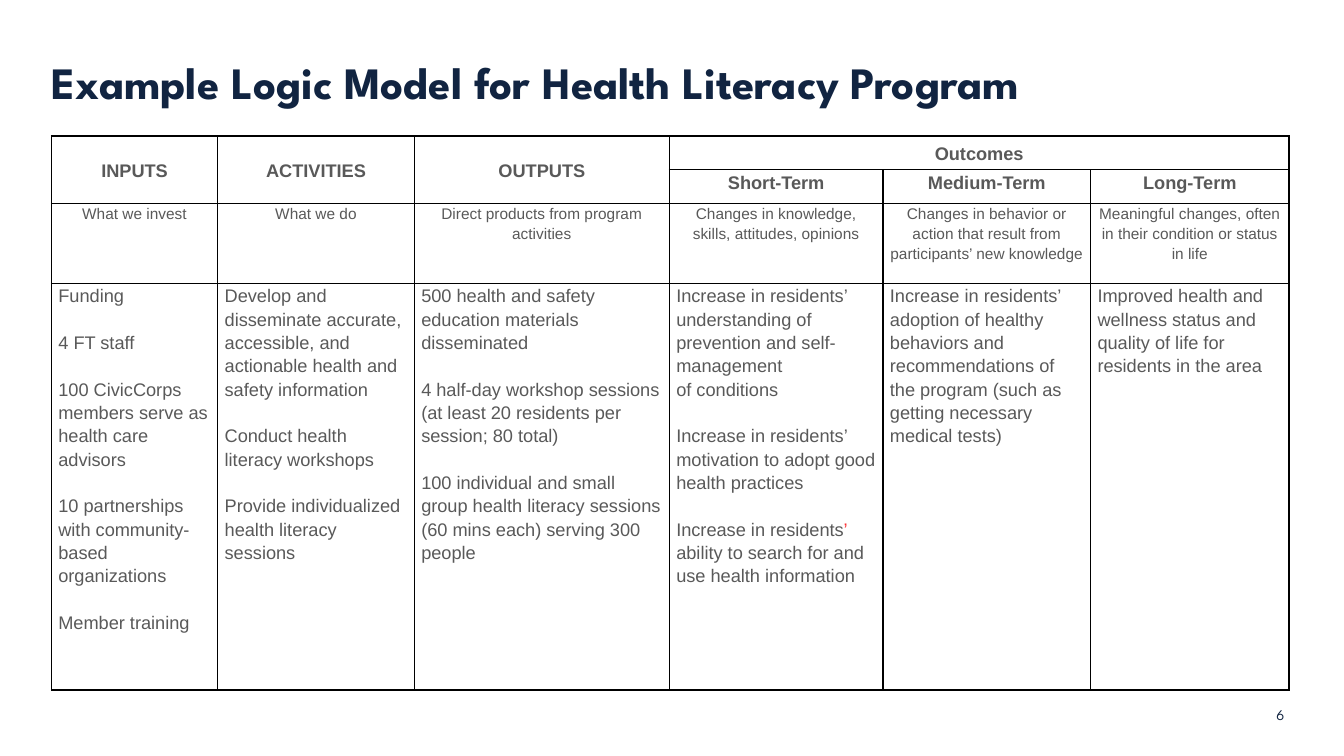
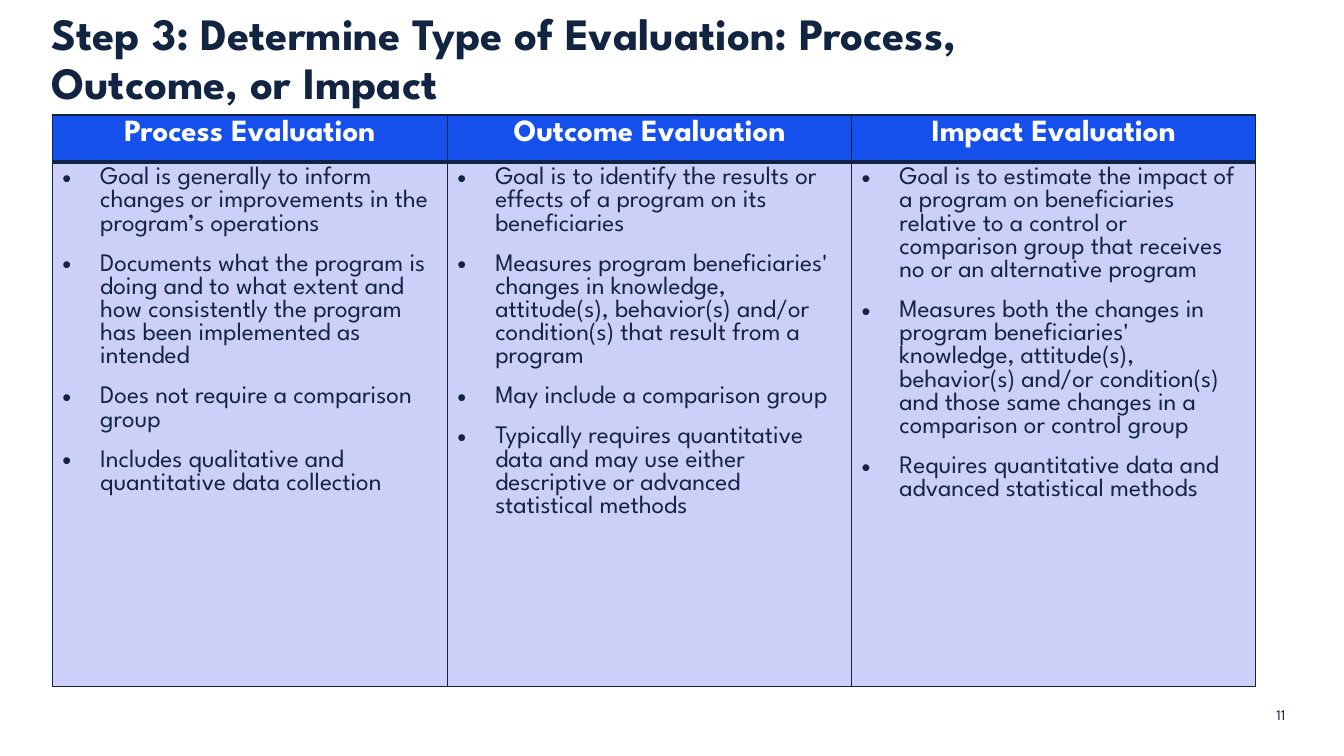
from lxml import etree
from pptx import Presentation
from pptx.dml.color import RGBColor
from pptx.enum.text import MSO_ANCHOR, PP_ALIGN
from pptx.oxml.ns import qn
from pptx.util import Pt

LEFT, CENTER = PP_ALIGN.LEFT, PP_ALIGN.CENTER
TOP, MIDDLE, BOTTOM = MSO_ANCHOR.TOP, MSO_ANCHOR.MIDDLE, MSO_ANCHOR.BOTTOM

COLORS = {
    "navy": "112441",
    "blue": "1550ED",
    "lavender": "CCD0F8",
    "gray": "595959",
    "red": "FD2F32",
    "black": "000000",
    "white": "FFFFFF",
}
BRAND_FONT = "League Spartan"
BODY_FONT = "Arial"
MARGIN = 36.7
EDGES = ("lnL", "lnR", "lnT", "lnB")

LOGIC_COLUMNS = (118.8, 140.4, 182.2, 152.6, 148.3, 141.8)
LOGIC_ROWS = (24, 24, 57.2, 290.5)
LOGIC_HEADINGS = ("INPUTS", "ACTIVITIES", "OUTPUTS", "Outcomes")
LOGIC_TERMS = ("Short-Term", "Medium-Term", "Long-Term")
LOGIC_HINTS = (
    "What we invest",
    "What we do",
    "Direct products from program activities",
    "Changes in knowledge, skills, attitudes, opinions",
    "Changes in behavior or action that result from participants’ new knowledge",
    "Meaningful changes, often in their condition or status in life",
)
LOGIC_DETAILS = (
    (
        "Funding",
        "4 FT staff",
        "100 CivicCorps members serve as health care advisors",
        "10 partnerships with community-based organizations",
        "Member training",
    ),
    (
        "Develop and disseminate accurate, accessible, and\vactionable health and safety information",
        "Conduct health literacy workshops",
        "Provide individualized health literacy sessions",
    ),
    (
        "500 health and safety education materials disseminated",
        "4 half-day workshop sessions (at least 20 residents per session; 80 total)",
        "100 individual and small group health literacy sessions (60 mins each) serving 300 people",
    ),
    (
        "Increase in residents’ understanding of prevention and self-management\vof conditions",
        "Increase in residents’ motivation to adopt good health practices",
        ("Increase in residents", "’ ", "ability to search for and use health information"),
    ),
    (
        "Increase in residents’ adoption of healthy behaviors and recommendations "
        "of the program (such as getting necessary medical tests)",
    ),
    ("Improved health and wellness status and quality of life for residents in the area",),
)

EVALUATIONS = {
    "Process Evaluation": (
        "Goal is generally to inform changes or improvements in the program’s operations",
        "Documents what the program is doing and to what extent and how consistently "
        "the program has been implemented as intended",
        "Does not require a comparison group",
        "Includes qualitative and quantitative data collection",
    ),
    "Outcome Evaluation": (
        "Goal is to identify the results or effects of a program on its beneficiaries",
        "Measures program beneficiaries' changes in knowledge, attitude(s), behavior(s) "
        "and/or condition(s) that result from a program",
        "May include a comparison group",
        "Typically requires quantitative data and may use either descriptive or "
        "advanced statistical methods",
    ),
    "Impact Evaluation": (
        "Goal is to estimate the impact of a program on beneficiaries relative to a "
        "control or comparison group that receives no or an alternative program",
        "Measures both the changes in program beneficiaries' knowledge, attitude(s), "
        "behavior(s) and/or condition(s) and those same changes in a comparison or control group",
        "Requires quantitative data and advanced statistical methods",
    ),
}


class Deck:
    def __init__(self):
        self.deck = Presentation()
        self.deck.slide_width, self.deck.slide_height = Pt(960), Pt(540)
        self.page = None

    def add_page(self, title, number, title_width):
        self.page = self.deck.slides.add_slide(self.deck.slide_layouts[6])
        self.text(title, (MARGIN, 44.6, title_width, 33.1), 32, BOTTOM, bold=True, line_spacing=0.9)
        self.text(str(number), (911.7, 505.4, 18.5, 10.8), 10.5, MIDDLE)

    def text(self, content, place, size, anchor, bold=False, line_spacing=1.0):
        box = self.page.shapes.add_textbox(*map(Pt, place))
        frame = box.text_frame
        frame.word_wrap = True
        frame.margin_left = frame.margin_right = frame.margin_top = frame.margin_bottom = 0
        frame.vertical_anchor = anchor
        self.set_paragraphs(frame, [content], size, "navy", BRAND_FONT, bold,
                            line_spacing=line_spacing)

    def set_paragraphs(self, frame, texts, size, color, font, bold=False, align=LEFT,
                       line_spacing=1.0, before=0, after=0, bullets=False):
        for index, text in enumerate(texts):
            para = frame.add_paragraph() if index else frame.paragraphs[0]
            pieces = (text,) if isinstance(text, str) else text
            para.text = pieces[0]
            for piece in pieces[1:]:
                para.add_run().text = piece
            para.alignment = align
            para.line_spacing = line_spacing
            para.space_before = Pt(before if index else 0)
            para.space_after = Pt(after)
            if bullets:
                self.bullet(para)
            for span in para.runs:
                span.font.size = Pt(size)
                span.font.name = font
                span.font.bold = bold
                span.font.color.rgb = RGBColor.from_string(COLORS[color])
            if len(pieces) > 1:
                para.runs[1].font.color.rgb = RGBColor.from_string(COLORS["red"])

    def bullet(self, para):
        properties = para._p.get_or_add_pPr()
        properties.set("marL", str(Pt(27)))
        properties.set("indent", str(-Pt(27)))
        etree.SubElement(properties, qn("a:buFont")).set("typeface", BODY_FONT)
        etree.SubElement(properties, qn("a:buChar")).set("char", "•")

    def table(self, left, top, columns, rows):
        frame = self.page.shapes.add_table(
            len(rows), len(columns), Pt(left), Pt(top), Pt(sum(columns)), Pt(sum(rows)))
        table = frame.table
        table.first_row = table.horz_banding = False
        for column, width in zip(table.columns, columns):
            column.width = Pt(width)
        for row, height in zip(table.rows, rows):
            row.height = Pt(height)
        return table

    def style_cell(self, cell, line_color, fill=None, top_width=1, bottom_width=1):
        if fill:
            cell.fill.solid()
            cell.fill.fore_color.rgb = RGBColor.from_string(COLORS[fill])
        else:
            cell.fill.background()
        properties = cell._tc.get_or_add_tcPr()
        for index, (edge, width) in enumerate(zip(EDGES, (1, 1, top_width, bottom_width))):
            line = etree.Element(qn("a:" + edge), w=str(Pt(width)))
            solid = etree.SubElement(line, qn("a:solidFill"))
            etree.SubElement(solid, qn("a:srgbClr")).set("val", COLORS[line_color])
            properties.insert(index, line)

    def logic_table(self):
        table = self.table(MARGIN, 97.2, LOGIC_COLUMNS, LOGIC_ROWS)
        for cell in table.iter_cells():
            cell.margin_left = cell.margin_right = Pt(5)
            cell.margin_top = cell.margin_bottom = 0
            self.style_cell(cell, "black")
        for column in range(3):
            table.cell(0, column).merge(table.cell(1, column))
        table.cell(0, 3).merge(table.cell(0, 5))

        def fill_row(row, first, contents, size, **style):
            for column, texts in enumerate(contents, first):
                self.set_paragraphs(table.cell(row, column).text_frame, texts, size, "gray",
                                    BODY_FONT, line_spacing=1.15, **style)

        fill_row(0, 0, [[text] for text in LOGIC_HEADINGS], 13, bold=True, align=CENTER)
        fill_row(1, 3, [[text] for text in LOGIC_TERMS], 13, bold=True, align=CENTER)
        fill_row(2, 0, [[text] for text in LOGIC_HINTS], 11, align=CENTER)
        fill_row(3, 0, LOGIC_DETAILS, 13, before=16.7)
        for column in range(len(LOGIC_HEADINGS)):
            table.cell(0, column).vertical_anchor = MIDDLE

    def evaluation_table(self):
        table = self.table(37.4, 82.1, (282.2, 288.7, 288.7), (33.1, 374.4))
        for column, (heading, points) in enumerate(EVALUATIONS.items()):
            head, body = table.cell(0, column), table.cell(1, column)
            self.style_cell(head, "navy", "blue", bottom_width=3)
            self.style_cell(body, "navy", "lavender", top_width=3)
            head.vertical_anchor = body.vertical_anchor = TOP
            self.set_paragraphs(head.text_frame, [heading], 22, "white", BRAND_FONT, True, CENTER)
            self.set_paragraphs(body.text_frame, points, 18, "navy", BRAND_FONT,
                                after=12, bullets=True)


def main():
    show = Deck()
    show.add_page("Example Logic Model for Health Literacy Program", 6, 809.3)
    show.logic_table()
    show.add_page("Step 3: Determine Type of Evaluation: Process, Outcome, or Impact", 11, 770.4)
    show.evaluation_table()
    show.deck.save("out.pptx")


if __name__ == "__main__":
    main()
